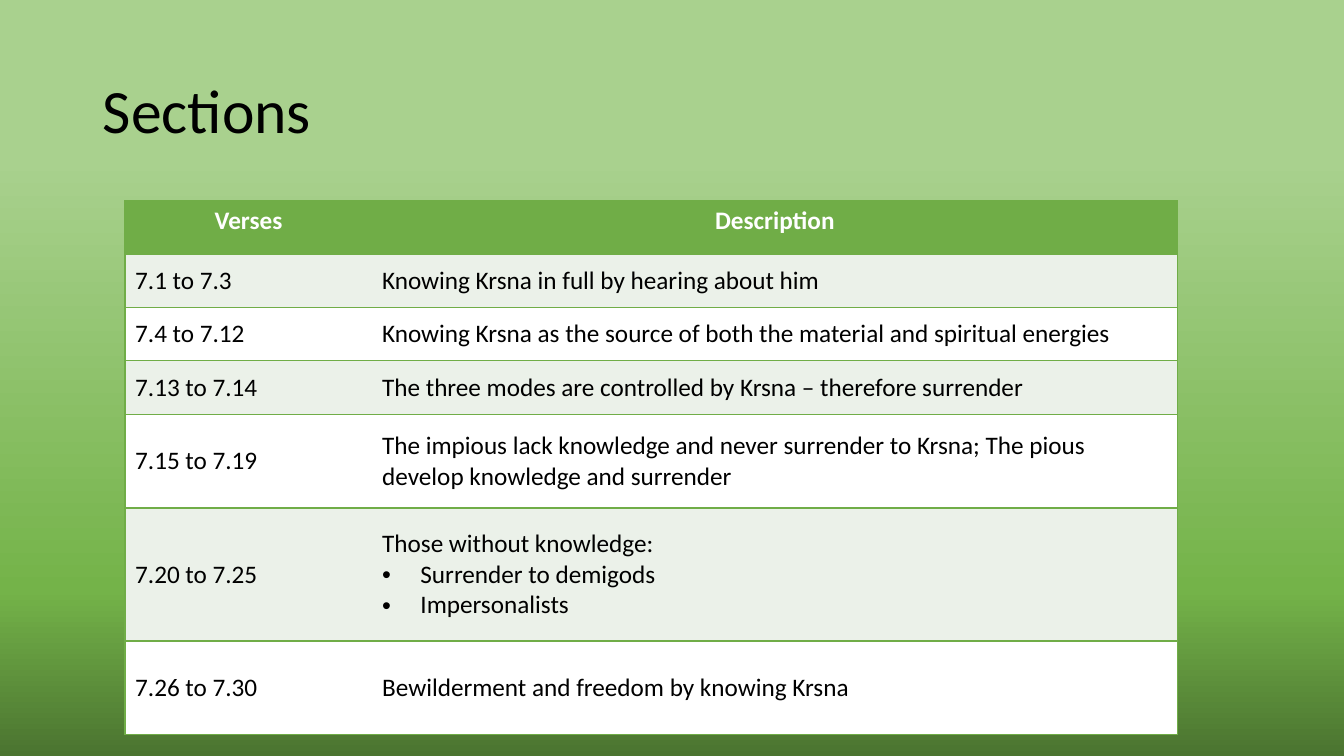
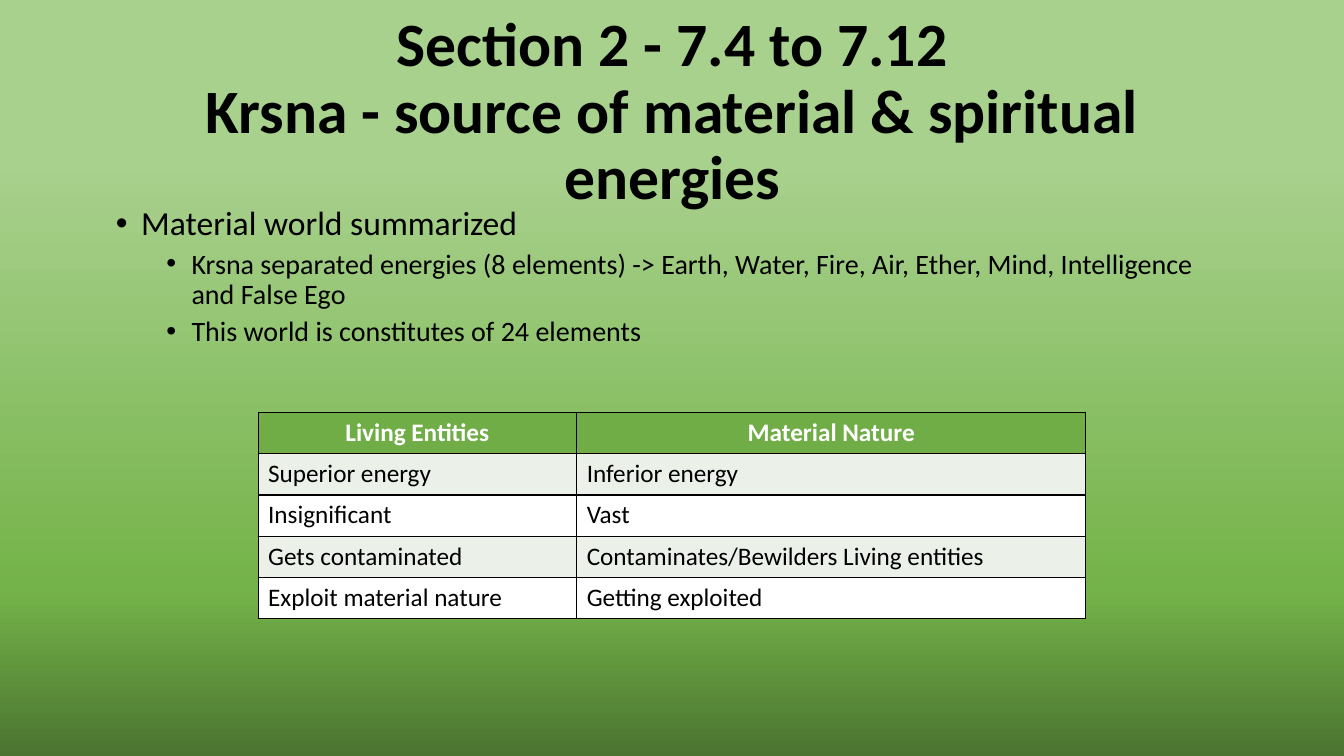
from lxml import etree
from pptx import Presentation
from pptx.dml.color import RGBColor
from pptx.enum import text as t
from pptx.oxml import ns, parse_xml
from pptx.util import Inches, Pt

COLORS = {"black": "000000", "white": "FFFFFF", "green": "70AD47", "band": "EBF1E9"}
BACKDROP = [(0, "4B7430"), (22, "74B349"), (79, "A9D18E"), (100, "A9D18E")]
FONT = "Calibri"
NO_GRID_STYLE = "{2D5ABB26-0587-4C30-8999-92F81FD0307C}"
TITLE_BOX = (0.92, 0.4, 11.5, 1.45)
BODY_BOX = (0.92, 2, 11.5, 4.76)

CENTER, LEFT = t.PP_ALIGN.CENTER, t.PP_ALIGN.LEFT
# bullet: left margin and hanging width in inches
STYLES = {
    "title": {"size": 44, "spacing": 0.9},
    "title bold": {"size": 44, "spacing": 0.9, "bold": True, "align": CENTER},
    "point": {"size": 24, "spacing": 0.9, "before": 5, "bullet": (0.38, 0.25)},
    "subpoint": {"size": 20, "spacing": 0.9, "before": 5, "bullet": (0.88, 0.25), "level": 1},
    "header": {"size": 18, "bold": True, "align": CENTER, "color": "white"},
    "cell": {"size": 18},
    "cell point": {"size": 18, "bullet": (0.38, 0.38)},
}

SLIDES = [
    {
        "layout": 5,
        "title": [("Sections", "title")],
        "table": {
            "at": (1.24, 1.99), "columns": [2.45, 7.99],
            "heights": [0.53] * 4 + [0.93, 1.32, 0.93],
            "line": "green", "inner": False, "anchor": t.MSO_ANCHOR.MIDDLE,
            "rows": [
                ("Verses", "Description"),
                ("7.1 to 7.3", "Knowing Krsna in full by hearing about him"),
                ("7.4 to 7.12", "Knowing Krsna as the source of both the material and spiritual energies"),
                ("7.13 to 7.14", "The three modes are controlled by Krsna – therefore surrender"),
                ("7.15 to 7.19", "The impious lack knowledge and never surrender to Krsna; "
                                 "The pious develop knowledge and surrender"),
                ("7.20 to 7.25", [("Those without knowledge:", "cell"),
                                  ("Surrender to demigods", "cell point"),
                                  ("Impersonalists", "cell point")]),
                ("7.26 to 7.30", "Bewilderment and freedom by knowing Krsna"),
            ],
        },
    },
    {
        "layout": 1,
        "title": [("Section 2 - 7.4 to 7.12", "title bold"),
                  ("Krsna - source of material & spiritual energies", "title bold")],
        "body": [
            ("Material world summarized", "point"),
            ("Krsna separated energies (8 elements) -> Earth, Water, Fire, Air, Ether, Mind, "
             "Intelligence and False Ego", "subpoint"),
            ("This world is constitutes of 24 elements", "subpoint"),
        ],
        "table": {
            "at": (2.56, 4.09), "columns": [3.16, 5.05], "heights": [0.41] * 5,
            "line": "black", "inner": True, "anchor": t.MSO_ANCHOR.TOP,
            "rows": [
                ("Living Entities", "Material Nature"),
                ("Superior energy", "Inferior energy"),
                ("Insignificant", "Vast"),
                ("Gets contaminated", "Contaminates/Bewilders Living entities"),
                ("Exploit material nature", "Getting exploited"),
            ],
        },
    },
]


def rgb(name):
    return RGBColor.from_string(COLORS[name])


def add_child(parent, tag, **attributes):
    return etree.SubElement(parent, ns.qn(tag), attributes)


def paint_backdrop(master):
    fill = master.background.fill
    fill.gradient()
    fill.gradient_angle = 90
    stops = master.element.find(".//" + ns.qn("p:bgPr")).find(".//" + ns.qn("a:gsLst"))
    for stop in list(stops):
        stops.remove(stop)
    for percent, color in BACKDROP:
        stop = add_child(stops, "a:gs", pos=str(percent * 1000))
        add_child(stop, "a:srgbClr", val=color)


def write_lines(frame, lines):
    """Fill a text frame with (text, style name) paragraphs."""
    for index, (words, style_name) in enumerate(lines):
        style = STYLES[style_name]
        para = frame.add_paragraph() if index else frame.paragraphs[0]
        formats = {"alignment": style.get("align", LEFT), "level": style.get("level", 0),
                   "line_spacing": style.get("spacing", 1.0),
                   "space_before": Pt(style.get("before", 0))}
        for name, value in formats.items():
            setattr(para, name, value)
        if "bullet" in style:
            margin, hanging = style["bullet"]
            properties = para._p.get_or_add_pPr()
            properties.set("marL", str(Inches(margin)))
            properties.set("indent", str(-Inches(hanging)))
            add_child(properties, "a:buFont", typeface="Arial")
            add_child(properties, "a:buChar", char="•")
        span = para.add_run()
        span.text = words
        fonts = {"name": FONT, "size": Pt(style["size"]), "bold": style.get("bold", False)}
        for name, value in fonts.items():
            setattr(span.font, name, value)
        span.font.color.rgb = rgb(style.get("color", "black"))


def fill_placeholder(box, at, lines, anchor):
    box.left, box.top, box.width, box.height = map(Inches, at)
    formats = {"auto_size": t.MSO_AUTO_SIZE.NONE, "word_wrap": True, "vertical_anchor": anchor}
    for name, value in formats.items():
        setattr(box.text_frame, name, value)
    write_lines(box.text_frame, lines)


def border_cell(cell, color, sides):
    """Draw a 1 pt line on the given sides (of L, R, T, B) and none on the others."""
    properties = cell._tc.get_or_add_tcPr()
    for side in "LRTB":
        line = add_child(properties, "a:ln" + side, w=str(Pt(1)))
        if side in sides:
            add_child(add_child(line, "a:solidFill"), "a:srgbClr", val=COLORS[color])
        else:
            add_child(line, "a:noFill")


def draw_table(page, plan):
    rows, columns, heights = plan["rows"], plan["columns"], plan["heights"]
    frame = page.shapes.add_table(len(rows), len(columns), *map(Inches, plan["at"]),
                                  Inches(sum(columns)), Inches(sum(heights)))
    table = frame.table
    table._tbl.tblPr.find(ns.qn("a:tableStyleId")).text = NO_GRID_STYLE
    for column, width in zip(table.columns, columns):
        column.width = Inches(width)
    for row, height in zip(table.rows, heights):
        row.height = Inches(height)
    last = len(columns) - 1
    for r, row in enumerate(rows):
        for c, content in enumerate(row):
            cell = table.cell(r, c)
            sides = "TB"
            if plan["inner"] or c == 0:
                sides += "L"
            if plan["inner"] or c == last:
                sides += "R"
            border_cell(cell, plan["line"], sides)
            cell.fill.solid()
            cell.fill.fore_color.rgb = rgb("green" if r == 0 else "band" if r % 2 else "white")
            cell.vertical_anchor = plan["anchor"] if r else t.MSO_ANCHOR.TOP
            if isinstance(content, str):
                content = [(content, "cell" if r else "header")]
            write_lines(cell.text_frame, content)


def main():
    deck = Presentation()
    deck.slide_width, deck.slide_height = Inches(13.33), Inches(7.5)
    paint_backdrop(deck.slide_master)
    for plan in SLIDES:
        page = deck.slides.add_slide(deck.slide_layouts[plan["layout"]])
        fill_placeholder(page.shapes.title, TITLE_BOX, plan["title"], t.MSO_ANCHOR.MIDDLE)
        if "body" in plan:
            fill_placeholder(page.placeholders[1], BODY_BOX, plan["body"], t.MSO_ANCHOR.TOP)
        draw_table(page, plan["table"])
    deck.save("out.pptx")


if __name__ == "__main__":
    main()
